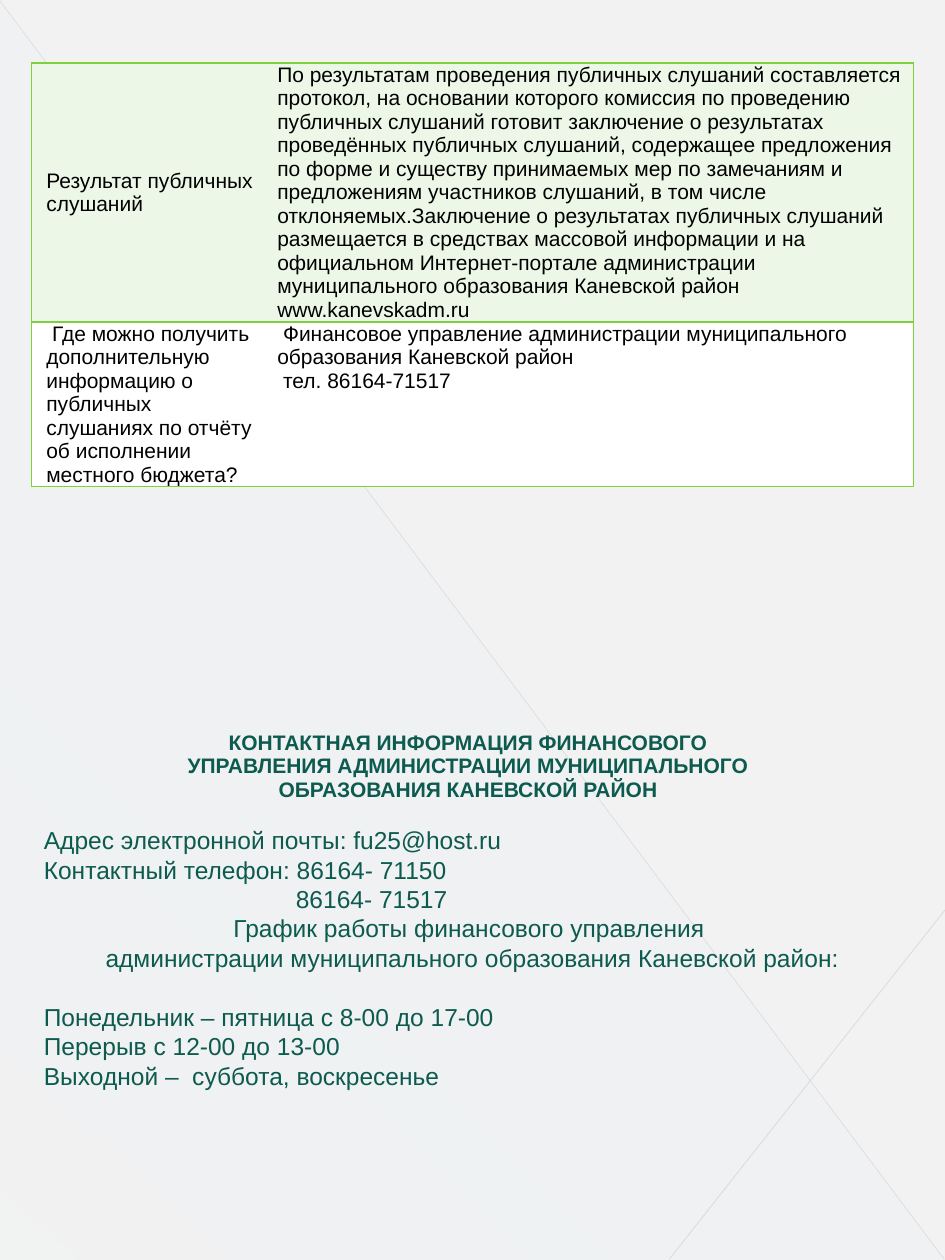
from dataclasses import dataclass

from lxml import etree
from pptx import Presentation
from pptx.dml.color import RGBColor
from pptx.enum.shapes import MSO_CONNECTOR, MSO_SHAPE
from pptx.enum.text import MSO_ANCHOR, PP_ALIGN
from pptx.oxml.ns import qn
from pptx.util import Pt

LEFT, CENTER = PP_ALIGN.LEFT, PP_ALIGN.CENTER
TOP, MIDDLE, BOTTOM = MSO_ANCHOR.TOP, MSO_ANCHOR.MIDDLE, MSO_ANCHOR.BOTTOM
STRAIGHT = MSO_CONNECTOR.STRAIGHT
RIGHT_TRIANGLE = MSO_SHAPE.RIGHT_TRIANGLE


@dataclass(frozen=True)
class Theme:
    font: str = "Arial"
    background: str = "F2F2F2"
    tint: str = "D6ECFF"
    border: str = "7FD13B"
    bands: tuple = ("ECF7E8", "FFFFFF")
    ink: str = "000000"
    accent: str = "0D5A4F"
    small: int = 12
    large: int = 14


THEME = Theme()

HEARING_ROWS = [
    (["Результат публичных слушаний"],
     ["По результатам проведения публичных слушаний составляется протокол, "
      "на основании которого комиссия по проведению публичных слушаний готовит "
      "заключение о результатах проведённых публичных слушаний, содержащее "
      "предложения по форме и существу принимаемых мер по замечаниям и "
      "предложениям участников слушаний, в том числе отклоняемых.Заключение о "
      "результатах публичных слушаний размещается в средствах массовой "
      "информации и на официальном Интернет-портале администрации "
      "муниципального образования Каневской район  www.kanevskadm.ru"]),
    ([" Где можно получить дополнительную информацию о публичных слушаниях по "
      "отчёту об исполнении местного бюджета?"],
     [" Финансовое управление администрации муниципального образования "
      "Каневской район",
      " тел. 86164-71517"]),
]
HEADING = ("КОНТАКТНАЯ ИНФОРМАЦИЯ ФИНАНСОВОГО УПРАВЛЕНИЯ АДМИНИСТРАЦИИ "
           "МУНИЦИПАЛЬНОГО ОБРАЗОВАНИЯ КАНЕВСКОЙ РАЙОН")
# text, alignment, left indent, space before
CONTACT_LINES = [
    ("Адрес электронной почты: fu25@host.ru", LEFT, 0, 0),
    ("Контактный телефон: 86164- 71150", LEFT, 0, 0),
    ("86164- 71517", LEFT, 144, 0),
    ("График работы финансового управления ", CENTER, 0, 0),
    ("администрации муниципального образования Каневской район:", CENTER, 0, 0),
    ("Понедельник – пятница с 8-00 до 17-00", LEFT, 0, 17),
    ("Перерыв с 12-00 до 13-00", LEFT, 0, 0),
    ("Выходной –  суббота, воскресенье", LEFT, 0, 0),
]


def rgb(color):
    return RGBColor.from_string(color)


def add_element(parent, tag, **attributes):
    return etree.SubElement(parent, qn(tag), attributes)


def add_color(parent, color, opacity=100):
    element = add_element(parent, "a:srgbClr", val=color)
    if opacity < 100:
        add_element(element, "a:alpha", val=str(opacity * 1000))


def add_text(paragraph, text, size, color, bold=False, align=LEFT):
    paragraph.alignment = align
    run = paragraph.add_run()
    run.text = text
    font = run.font
    font.name, font.size, font.bold = THEME.font, Pt(size), bold
    font.color.rgb = rgb(color)


def add_faint_line(slide, start, end, color, width, opacity):
    line = slide.shapes.add_connector(
        STRAIGHT, *(Pt(value) for value in (*start, *end)))
    line.line.width = Pt(width)
    line.line.color.rgb = rgb(color)
    color_element = line._element.spPr.find(".//" + qn("a:srgbClr"))
    add_element(color_element, "a:alpha", val=str(opacity * 1000))
    add_element(line._element.spPr, "a:effectLst")


def add_backdrop(slide, width, height):
    fill = slide.background.fill
    fill.solid()
    fill.fore_color.rgb = rgb(THEME.background)

    triangle = slide.shapes.add_shape(
        RIGHT_TRIANGLE, Pt(0.5), Pt(1.5), Pt(width - 1), Pt(height - 2))
    triangle.shadow.inherit = False
    triangle.line.fill.background()
    gradient = etree.Element(qn("a:gradFill"))
    stops = add_element(gradient, "a:gsLst")
    for position, opacity in ((0, 10), (70, 8), (100, 1)):
        stop = add_element(stops, "a:gs", pos=str(position * 1000))
        add_color(stop, THEME.tint, opacity)
    add_element(gradient, "a:lin", ang=str(133 * 60000), scaled="0")
    triangle._element.spPr.find(qn("a:prstGeom")).addnext(gradient)

    add_faint_line(slide, (0, 0.5), (width - 0.5, height - 0.5), "B7BCC5", 0.39, 35)
    add_faint_line(slide, (width, 520), (382.5, height - 0.5), "BFC3CB", 0.47, 45)


def add_plain_table(slide, box, columns, rows):
    left, top, width, height = box
    table = slide.shapes.add_table(
        len(rows), len(columns), Pt(left), Pt(top), Pt(width), Pt(height)).table
    table.first_row = table.horz_banding = False
    for column, size in zip(table.columns, columns):
        column.width = Pt(size)
    for row, size in zip(table.rows, rows):
        row.height = Pt(size)
    return table


def set_margins(cell, left, top, right, bottom):
    cell.margin_left, cell.margin_top = Pt(left), Pt(top)
    cell.margin_right, cell.margin_bottom = Pt(right), Pt(bottom)


def set_borders(cell, sides):
    """Draw the named sides (of L, R, T, B) and clear the others."""
    properties = cell._tc.get_or_add_tcPr()
    for index, side in enumerate("LRTB"):
        line = etree.Element(qn("a:ln" + side), w=str(Pt(1)))
        if side in sides:
            add_color(add_element(line, "a:solidFill"), THEME.border)
        else:
            add_element(line, "a:noFill")
        properties.insert(index, line)


def add_hearing_table(slide, box):
    table = add_plain_table(slide, box, (132, box[2] - 132), (148, box[3] - 148))
    for row, (contents, band) in enumerate(zip(HEARING_ROWS, THEME.bands)):
        for column, paragraphs in enumerate(contents):
            cell = table.cell(row, column)
            cell.fill.solid()
            cell.fill.fore_color.rgb = rgb(band)
            cell.vertical_anchor = TOP if column else MIDDLE
            set_margins(cell, 8.5, 0, 0, 0)
            set_borders(cell, "RTB" if column else "LTB")
            frame = cell.text_frame
            for index, text in enumerate(paragraphs):
                paragraph = frame.add_paragraph() if index else frame.paragraphs[0]
                add_text(paragraph, text, THEME.small, THEME.ink)


def add_heading(slide, box):
    cell = add_plain_table(slide, box, (box[2],), (box[3],)).cell(0, 0)
    cell.fill.background()
    cell.vertical_anchor = BOTTOM
    set_margins(cell, 0.7, 0.7, 0.7, 0)
    set_borders(cell, "")
    add_text(cell.text_frame.paragraphs[0], HEADING, THEME.small, THEME.accent,
             bold=True, align=CENTER)


def add_contacts(slide, box):
    frame = slide.shapes.add_textbox(*(Pt(value) for value in box)).text_frame
    frame.word_wrap = True
    for index, (text, align, indent, gap) in enumerate(CONTACT_LINES):
        paragraph = frame.add_paragraph() if index else frame.paragraphs[0]
        add_text(paragraph, text, THEME.large, THEME.accent, align=align)
        paragraph.space_before = Pt(gap)
        if indent:
            paragraph._p.get_or_add_pPr().set("marL", str(Pt(indent)))


def main():
    width, height = 540, 720
    presentation = Presentation()
    presentation.slide_width, presentation.slide_height = Pt(width), Pt(height)
    slide = presentation.slides.add_slide(presentation.slide_layouts[6])
    add_backdrop(slide, width, height)
    add_hearing_table(slide, (18, 36, 504, 242))
    add_heading(slide, (102, 414, 331, 44))
    add_contacts(slide, (18, 468, 504, 160))
    presentation.save("out.pptx")


if __name__ == "__main__":
    main()
